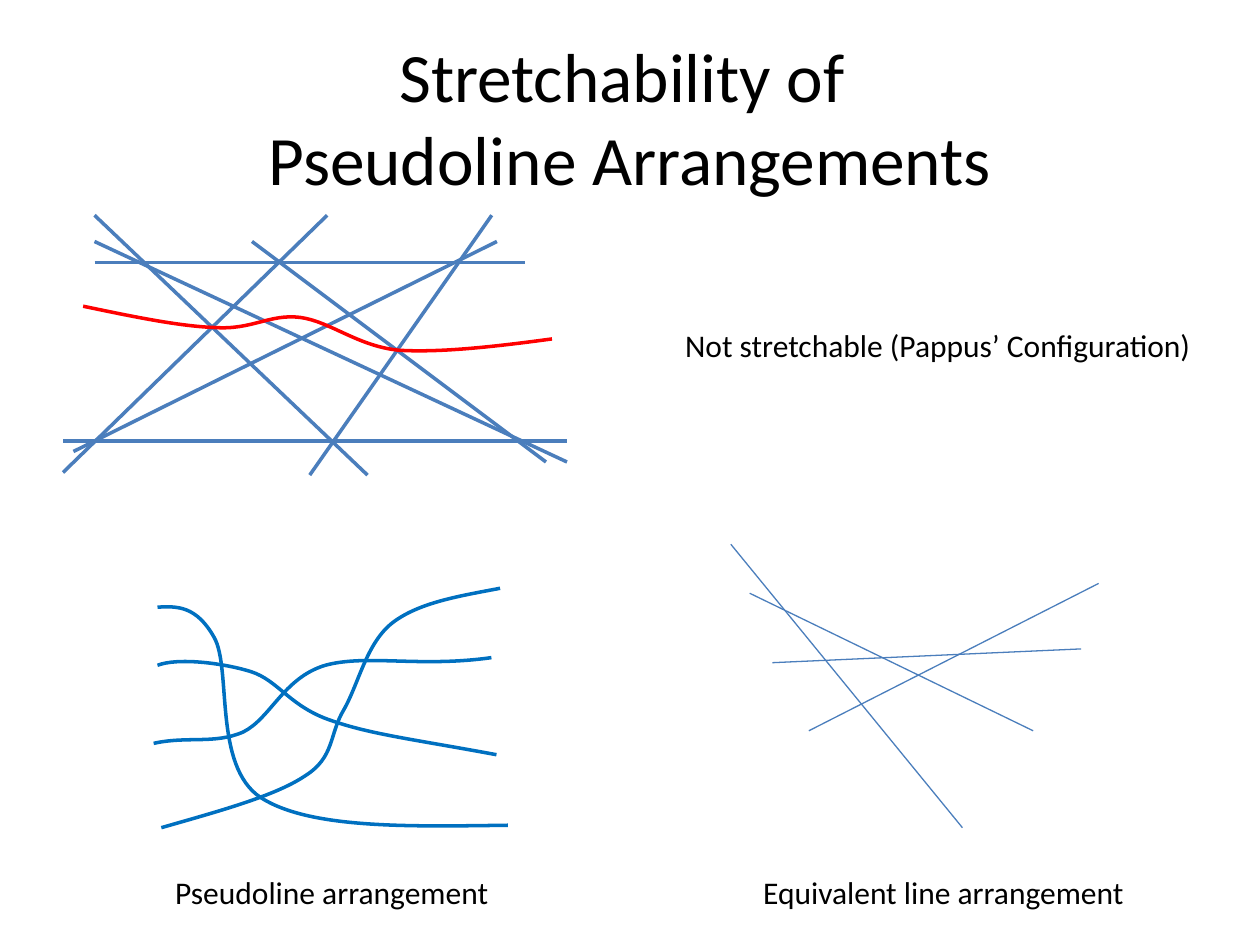
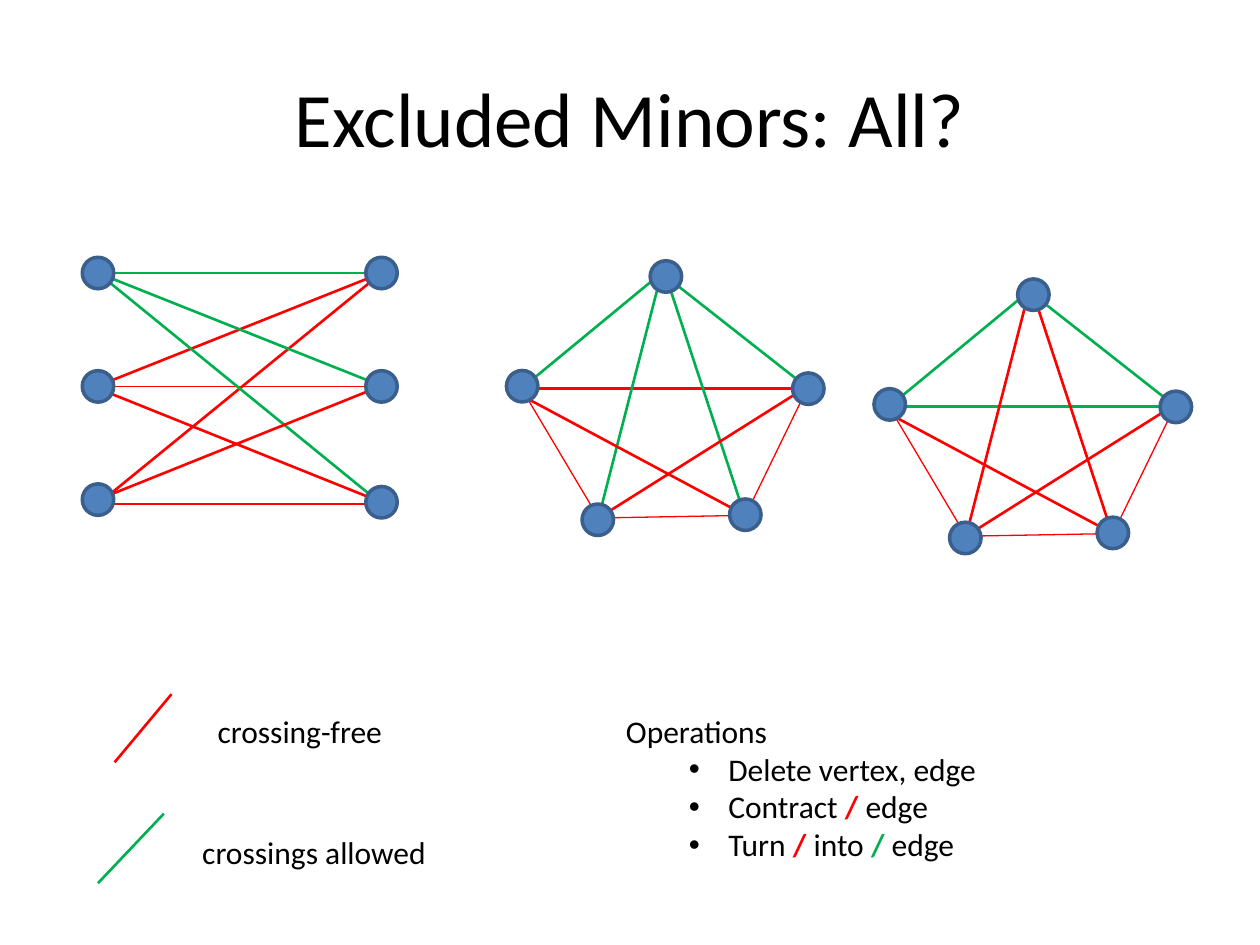
from lxml import etree
from pptx import Presentation
from pptx.dml.color import RGBColor
from pptx.enum.shapes import MSO_CONNECTOR, MSO_SHAPE
from pptx.enum.text import MSO_ANCHOR, PP_ALIGN
from pptx.oxml.ns import qn
from pptx.util import Pt

STRAIGHT = MSO_CONNECTOR.STRAIGHT
OVAL = MSO_SHAPE.OVAL
MIDDLE = MSO_ANCHOR.MIDDLE
CENTER = PP_ALIGN.CENTER

FONT = "Calibri"
BLACK = RGBColor(0x00, 0x00, 0x00)
RED = RGBColor(0xFF, 0x00, 0x00)
GREEN = RGBColor(0x00, 0xB0, 0x50)
LINE_BLUE = RGBColor(0x4B, 0x7E, 0xBC)
CURVE_BLUE = RGBColor(0x00, 0x70, 0xC0)
NODE_FILL = RGBColor(0x4F, 0x81, 0xBD)
NODE_LINE = RGBColor(0x3A, 0x5F, 0x8C)

THIN, EDGE, THICK = 0.75, 1.5, 2
NODE_SIZE = 18

# Straight lines: x1, y1, x2, y2
PAPPUS_LINES = [
    (54, 150, 300, 150), (36, 252, 324, 252),
    (54, 123, 210, 271.5), (177, 271.5, 281, 123),
    (42, 258, 284, 138), (324, 264, 54, 138),
    (187, 123, 36, 270), (312, 264, 144, 138),
]
EQUIVALENT_LINES = [
    (417.6, 311, 550, 473), (428.4, 339, 590.4, 417.6),
    (441.4, 378.7, 617.8, 370.8), (462.2, 417.6, 627.8, 333.4),
]

# Bezier curves: a start point, then three points for each segment
PAPPUS_CURVE = [
    (47.5, 175), (74.9, 180.7), (102.2, 186.5), (123.1, 187.2),
    (144, 188.6), (154.1, 179.3), (171.4, 181.4),
    (188.6, 183.6), (204.5, 198), (228.2, 200.2),
    (252, 201.6), (283.7, 198), (315.4, 193.7),
]
PSEUDOLINES = [
    [(90, 347), (101.5, 346.3), (112.3, 346.3), (122.4, 364.3),
     (132.5, 382.3), (121.7, 437.8), (149, 455.8),
     (177.1, 473.8), (234, 472.3), (290.2, 471.6)],
    [(90, 380.2), (101.5, 375.8), (126.7, 378.7), (143.3, 383.8),
     (159.1, 388.8), (165.6, 403.9), (189.4, 411.8),
     (212.4, 419.8), (236.9, 422.6), (283.7, 431.3)],
    [(87.8, 424.8), (107.3, 420.5), (122.4, 425.5), (139, 418.3),
     (154.8, 410.4), (162, 387.4), (185.8, 380.2),
     (209.5, 373.7), (239.8, 381.6), (280.8, 375.8)],
    [(92.2, 473), (124.6, 463.7), (157, 455), (174.2, 443.5),
     (191.5, 432.7), (187.9, 419.8), (196.6, 405.4),
     (205.2, 390.2), (209.5, 367.2), (224.6, 355.7),
     (239.8, 344.2), (262.8, 340.6), (285.8, 336.2)],
]

# Bipartite graph: left x, right x, and the ends of each edge
K33_LEFT, K33_RIGHT = 56, 218
K33_NODES = [(K33_LEFT, 156), (K33_RIGHT, 156), (K33_LEFT, 220.8),
             (K33_RIGHT, 220.8), (K33_LEFT, 285.5), (K33_RIGHT, 287)]
K33_EDGES = [  # left y, right y, colour, width
    (156, 156, GREEN, EDGE), (221, 221, RED, THIN), (288, 288, RED, EDGE),
    (220.5, 156, RED, EDGE), (288, 156, RED, EDGE), (156, 220.5, GREEN, EDGE),
    (156, 288, GREEN, EDGE), (285.5, 220.5, RED, EDGE), (222, 287, RED, EDGE),
]

# Complete graph on five vertices, drawn twice
K5_NODES = [(380.5, 158), (298.4, 220.7), (341.6, 297),
            (425.9, 294.1), (461.9, 222.1)]
K5_EDGES = {
    "left-top": (298, 222, 378, 156, EDGE),
    "left-bottom": (342, 296, 298, 222, THIN),
    "base": (426, 294.5, 342, 296, THIN),
    "right-bottom": (462, 220.5, 426, 294.5, THIN),
    "right-top": (462, 222, 378, 156, EDGE),
    "across": (298, 222, 462, 222, EDGE),
    "top-left foot": (342, 296, 378, 156, EDGE),
    "top-right foot": (426, 296, 380, 156, EDGE),
    "rising": (342, 296, 462, 220.5, EDGE),
    "falling": (298, 226, 426, 294.5, EDGE),
}
K5_VARIANTS = [  # shift right, shift down, edges that may be crossed
    (0, 0, {"left-top", "right-top", "top-left foot", "top-right foot"}),
    (210, 10.4, {"left-top", "right-top", "across"}),
]


def add_text(slide, left, top, width, height, text, size=18):
    box = slide.shapes.add_textbox(Pt(left), Pt(top), Pt(width), Pt(height))
    tf = box.text_frame
    tf.word_wrap = False
    tf.text = text
    set_font(tf.paragraphs[0], size)
    return tf


def set_font(p, size):
    p.font.name = FONT
    p.font.size = Pt(size)
    p.font.color.rgb = BLACK


def add_title(slide, text, size):
    tf = add_text(slide, 36, 21.6, 648, 90, text, size)
    tf.word_wrap = True
    tf.vertical_anchor = MIDDLE
    tf.paragraphs[0].alignment = CENTER


def add_line(slide, x1, y1, x2, y2, color, width):
    line = slide.shapes.add_connector(STRAIGHT, Pt(x1), Pt(y1), Pt(x2), Pt(y2))
    line.line.color.rgb = color
    line.line.width = Pt(width)
    etree.SubElement(line._element.spPr, qn("a:effectLst"))


def add_curve(slide, points, color):
    start, *rest = [(Pt(x), Pt(y)) for x, y in points]
    builder = slide.shapes.build_freeform(*start)
    builder.add_line_segments(rest, close=False)
    sp = builder.convert_to_shape()
    sp.shadow.inherit = False
    sp.fill.background()
    sp.line.color.rgb = color
    sp.line.width = Pt(THICK)
    # Turn every three line steps into one Bezier segment
    steps = list(sp._element.iter(qn("a:lnTo")))
    for i in range(0, len(steps), 3):
        bezier = etree.Element(qn("a:cubicBezTo"))
        steps[i].addprevious(bezier)
        for step in steps[i:i + 3]:
            bezier.append(step[0])
            step.getparent().remove(step)


def add_node(slide, x, y):
    r = NODE_SIZE / 2
    sp = slide.shapes.add_shape(OVAL, Pt(x - r), Pt(y - r),
                                Pt(NODE_SIZE), Pt(NODE_SIZE))
    sp.shadow.inherit = False
    sp.fill.solid()
    sp.fill.fore_color.rgb = NODE_FILL
    sp.line.color.rgb = NODE_LINE
    sp.line.width = Pt(THICK)


def add_bullet(tf, pieces):
    """Add a bullet from (text, accent colour or None) pieces."""
    p = tf.add_paragraph()
    p.level = 1
    set_font(p, 18)
    for text, accent in pieces:
        r = p.add_run()
        r.text = text
        if accent is not None:
            r.font.bold = True
            r.font.color.rgb = accent
    pPr = p._p.get_or_add_pPr()
    pPr.set("marL", str(Pt(58.5)))
    pPr.set("indent", str(Pt(-22.5)))
    bullet_font = etree.Element(qn("a:buFont"), typeface="Arial")
    bullet = etree.Element(qn("a:buChar"), char="•")
    pPr.insert(0, bullet_font)
    bullet_font.addnext(bullet)


def build_stretchability(slide):
    add_title(slide, "Stretchability of \vPseudoline Arrangements", 39.6)

    # Pappus configuration
    for ends in PAPPUS_LINES:
        add_line(slide, *ends, LINE_BLUE, THICK)
    add_curve(slide, PAPPUS_CURVE, RED)
    add_text(slide, 384.5, 183, 306.7, 29, "Not stretchable (Pappus’ Configuration)")

    # Pseudolines and the matching lines
    for points in PSEUDOLINES:
        add_curve(slide, points, CURVE_BLUE)
    for ends in EQUIVALENT_LINES:
        add_line(slide, *ends, LINE_BLUE, THIN)
    add_text(slide, 93, 495.4, 196, 29, "Pseudoline arrangement")
    add_text(slide, 429, 495.4, 223, 29, "Equivalent line arrangement")


def build_excluded_minors(slide):
    add_title(slide, "Excluded Minors: All?", 44)

    # Bipartite graph
    for y1, y2, color, width in K33_EDGES:
        add_line(slide, K33_LEFT, y1, K33_RIGHT, y2, color, width)
    for x, y in K33_NODES:
        add_node(slide, x, y)

    # Two colourings of the complete graph
    for dx, dy, crossable in K5_VARIANTS:
        for name, (x1, y1, x2, y2, width) in K5_EDGES.items():
            color = GREEN if name in crossable else RED
            add_line(slide, x1 + dx, y1 + dy, x2 + dx, y2 + dy, color, width)
        for x, y in K5_NODES:
            add_node(slide, x + dx, y + dy)

    # Legend
    add_line(slide, 98, 396.7, 65.5, 435.6, RED, EDGE)
    add_text(slide, 117.2, 403.2, 109.4, 29, "crossing-free")
    add_line(slide, 93.6, 465, 56, 504.7, GREEN, EDGE)
    add_text(slide, 108.5, 472.3, 144, 29, "crossings allowed")

    # Operations
    tf = add_text(slide, 350.6, 403.2, 216.7, 94.3, "Operations")
    add_bullet(tf, [("Delete vertex, edge", None)])
    add_bullet(tf, [("Contract ", None), ("/ ", RED), ("edge", None)])
    add_bullet(tf, [("Turn ", None), ("/", RED), (" into ", None),
                    ("/", GREEN), (" edge", None)])


def main():
    prs = Presentation()
    prs.slide_width, prs.slide_height = Pt(720), Pt(540)
    blank = prs.slide_layouts[6]
    for build in (build_stretchability, build_excluded_minors):
        build(prs.slides.add_slide(blank))
    prs.save("out.pptx")


if __name__ == "__main__":
    main()
